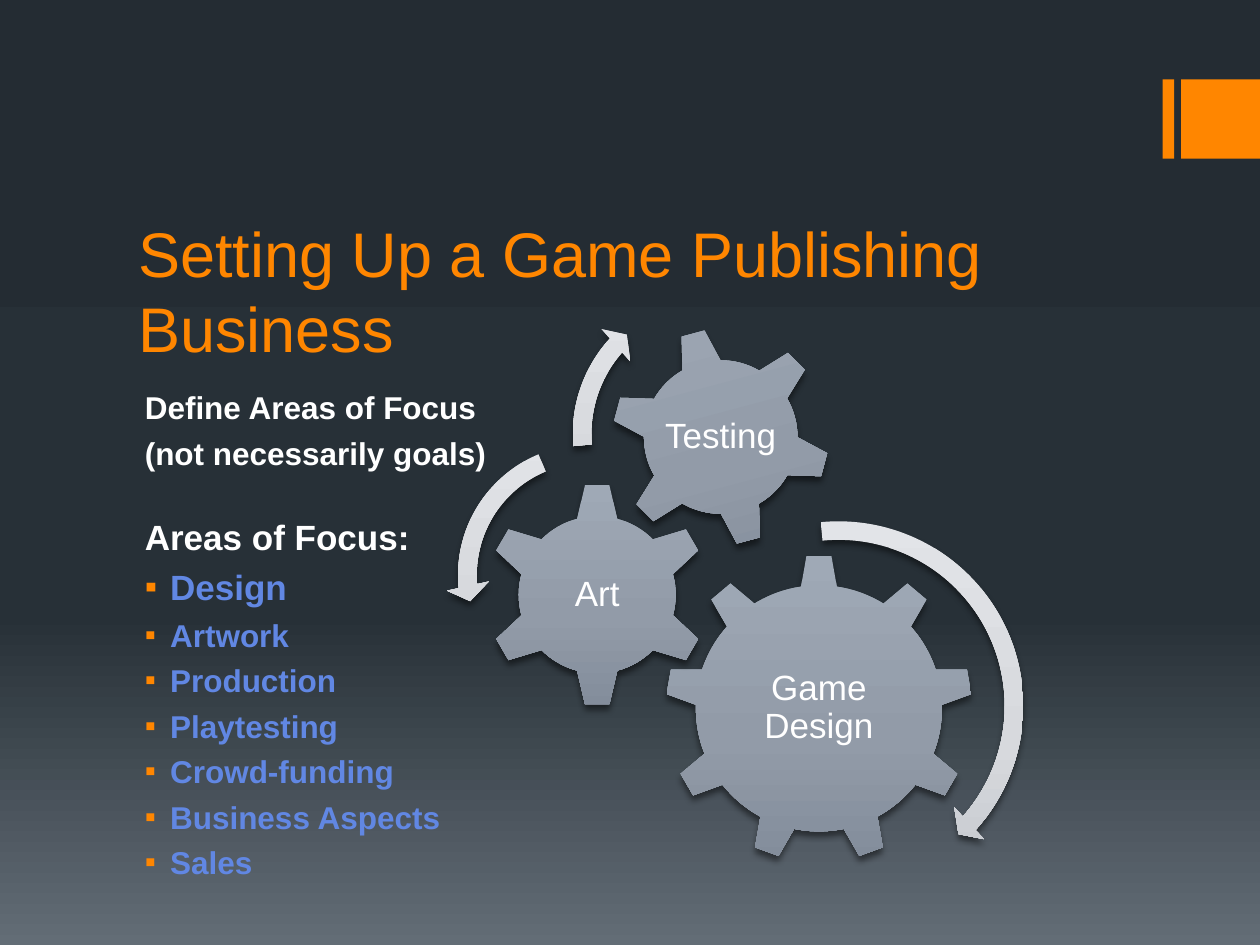
"""Build a slide on the focus areas of a game publishing business, with meshing gears."""
from copy import deepcopy
from dataclasses import dataclass

from lxml import etree
from pptx import Presentation
from pptx import util as u
from pptx.dml.color import RGBColor
from pptx.enum import shapes, text
from pptx.oxml import parse_xml
from pptx.oxml.ns import nsdecls, qn


@dataclass(frozen=True)
class Theme:
    font: str = "Arial"
    accent: str = "FF8600"
    white: str = "FFFFFF"
    topic: str = "6187E3"
    background: tuple = ((0, "242C33"), (0.65, "273037"), (1, "636D76"))
    gear: tuple = ((0, "9FA9B6"), (0.6, "929BA8"), (1, "838D9B"))
    arrow: tuple = ((0, "E2E4E8"), (0.6, "D7D9DD"), (1, "C1C5CB"))
    title_size: int = 36
    large: int = 20
    normal: int = 18


THEME = Theme()
KIND = shapes.MSO_SHAPE
ANCHOR = text.MSO_ANCHOR

TITLE = "Setting Up a Game Publishing Business"
TITLE_BOX = (2.54, 4.29, 20.32, 3.2)
BODY_BOX = (2.54, 7.7, 20.32, 9.83)
# text, size, bulleted, space before in points
BODY = [
    ("Define Areas of Focus", THEME.normal, False, 4.4),
    ("(not necessarily goals)", THEME.normal, False, 4.4),
    ("Areas of Focus:", THEME.large, False, 25),
    ("Design", THEME.large, True, 5),
] + [
    (topic, THEME.normal, True, 4.4)
    for topic in ("Artwork", "Production", "Playtesting", "Crowd-funding",
                  "Business Aspects", "Sales")
]
ACCENT_BARS = [(23.44, 1.6, 0.23, 1.6), (23.81, 1.6, 1.59, 1.6)]
# label, shape, left, top, side, rotation, label width, label height
GEARS = [
    ("Game Design", KIND.GEAR_9, 13.41, 11.18, 6.2, 0, 3.71, 3.2),
    ("Art", KIND.GEAR_6, 9.78, 9.73, 4.52, 0, 2.24, 2.24),
    ("Testing", KIND.GEAR_6, 12.32, 6.6, 4.42, 345, 2.49, 2.49),
]
# shape, left, top, side, band %, head angle, end angle, start angle, head %
ARROWS = [
    (KIND.CIRCULAR_ARROW, 12.93, 10.26, 7.95, 4.7, 4.98, 41.89, 264.47, 5.5),
    (KIND.LEFT_CIRCULAR_ARROW, 8.99, 8.71, 5.77, 6.5, 7.17, 174.82, 247.3, 7.5),
    (KIND.CIRCULAR_ARROW, 11.3, 5.64, 6.22, 6, 6.57, 221.9, 175.14, 7),
]


def cm(values):
    return [u.Cm(value) for value in values]


def set_gradient(fill, element, stops):
    fill.gradient()
    fill.gradient_angle = 270
    stop_list = next(element.iter(qn("a:gsLst")))
    stop_list.insert(1, deepcopy(stop_list[0]))
    for stop, (position, color) in zip(fill.gradient_stops, stops):
        stop.position = position
        stop.color.rgb = RGBColor.from_string(color)


def add_plain_shape(slide, kind, box):
    shape = slide.shapes.add_shape(kind, *cm(box))
    shape.shadow.inherit = False
    shape.line.fill.background()
    return shape


def add_raised_shape(slide, kind, box, stops):
    shape = add_plain_shape(slide, kind, box)
    set_gradient(shape.fill, shape._element, stops)
    shadow = parse_xml(
        f'<a:outerShdw {nsdecls("a")} blurRad="{u.Pt(3.8)}" dist="{u.Pt(3)}" '
        'dir="5400000" rotWithShape="0"><a:srgbClr val="000000"/></a:outerShdw>')
    etree.SubElement(shadow[0], qn("a:alpha")).set("val", "48000")
    shape._element.spPr.find(qn("a:effectLst")).append(shadow)
    return shape


def add_text_box(slide, box, anchor, margin=None):
    frame = slide.shapes.add_textbox(*cm(box)).text_frame
    frame.word_wrap = True
    frame.vertical_anchor = anchor
    if margin is not None:
        frame.margin_left = frame.margin_right = u.Cm(margin)
        frame.margin_top = frame.margin_bottom = u.Cm(margin)
    return frame


def format_runs(paragraph, size, color, bold=False):
    for run in paragraph.runs:
        run.font.name = THEME.font
        run.font.size = u.Pt(size)
        run.font.bold = bold
        run.font.color.rgb = RGBColor.from_string(color)


def set_indent(paragraph, bulleted):
    properties = paragraph._p.get_or_add_pPr()
    properties.set("marL", str(u.Cm(0.64)))
    properties.set("indent", str(u.Cm(-0.51)))
    if bulleted:
        color = etree.SubElement(properties, qn("a:buClr"))
        etree.SubElement(color, qn("a:srgbClr")).set("val", THEME.accent)
        etree.SubElement(properties, qn("a:buFont")).set("typeface", THEME.font)
        etree.SubElement(properties, qn("a:buChar")).set("char", "▪")
    else:
        etree.SubElement(properties, qn("a:buNone"))


def add_body(slide):
    frame = add_text_box(slide, BODY_BOX, ANCHOR.TOP)
    frame.text = "\n".join(line[0] for line in BODY)
    for paragraph, (_, size, bulleted, space) in zip(frame.paragraphs, BODY):
        paragraph.space_before = u.Pt(space)
        set_indent(paragraph, bulleted)
        format_runs(paragraph, size, THEME.topic if bulleted else THEME.white, True)


def add_gear(slide, label, kind, left, top, side, rotation, width, height):
    gear = add_raised_shape(slide, kind, (left, top, side, side), THEME.gear)
    gear.rotation = rotation
    label_box = (left + (side - width) / 2, top + (side - height) / 2, width, height)
    frame = add_text_box(slide, label_box, ANCHOR.MIDDLE, 0.08)
    frame.text = label
    paragraph = frame.paragraphs[0]
    paragraph.alignment = text.PP_ALIGN.CENTER
    paragraph.line_spacing = 0.9
    format_runs(paragraph, THEME.large, THEME.white)


def add_arrow(slide, kind, left, top, side, band, head_angle, end, start, head):
    arrow = add_raised_shape(slide, kind, (left, top, side, side), THEME.arrow)
    values = (band / 100, head_angle * 0.6, end * 0.6, start * 0.6, head / 100)
    for index, value in enumerate(values):
        arrow.adjustments[index] = value


def main():
    presentation = Presentation()
    presentation.slide_width, presentation.slide_height = cm((25.4, 19.05))
    slide = presentation.slides.add_slide(presentation.slide_layouts[6])
    set_gradient(slide.background.fill, slide._element, THEME.background)
    for box in ACCENT_BARS:
        bar = add_plain_shape(slide, KIND.RECTANGLE, box)
        bar.fill.solid()
        bar.fill.fore_color.rgb = RGBColor.from_string(THEME.accent)
    title = add_text_box(slide, TITLE_BOX, ANCHOR.BOTTOM)
    title.text = TITLE
    format_runs(title.paragraphs[0], THEME.title_size, THEME.accent)
    add_body(slide)
    for gear in GEARS:
        add_gear(slide, *gear)
    for arrow in ARROWS:
        add_arrow(slide, *arrow)
    presentation.save("out.pptx")


if __name__ == "__main__":
    main()
